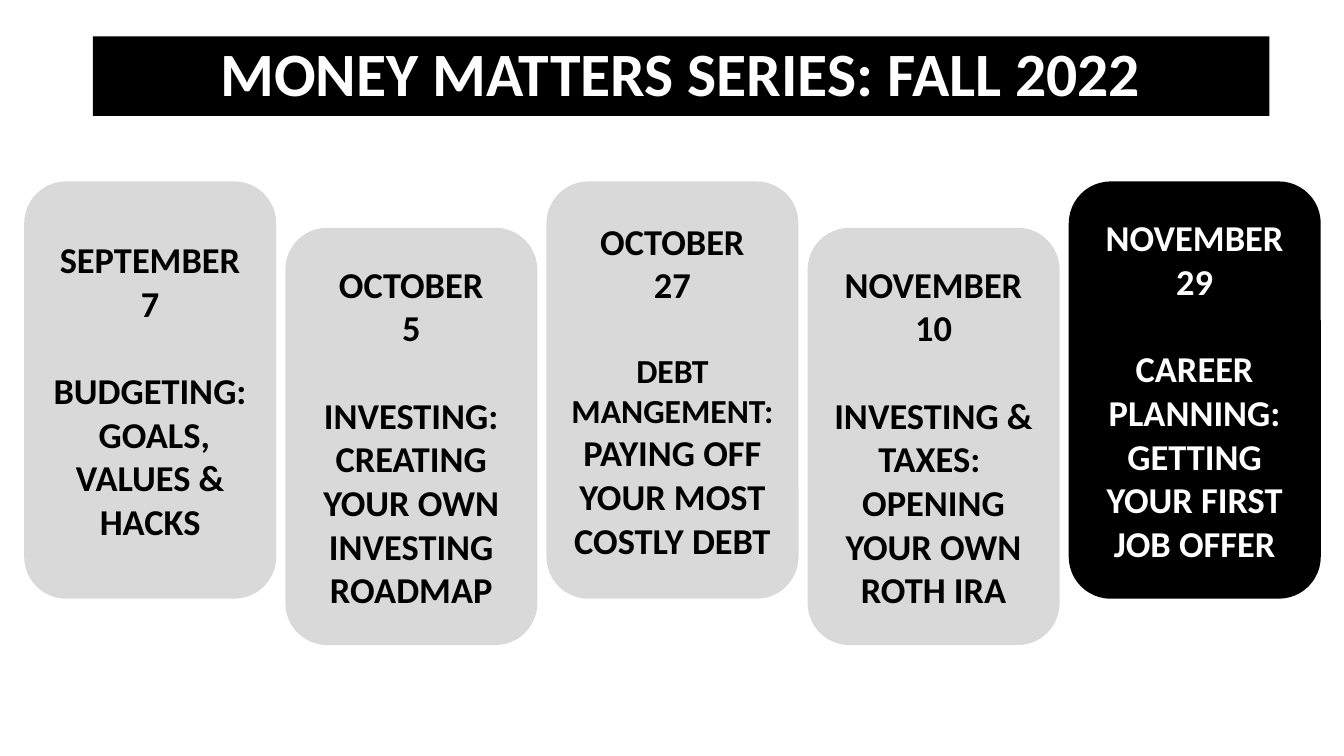
from dataclasses import dataclass

from pptx import Presentation
from pptx.dml.color import RGBColor
from pptx.enum.shapes import MSO_SHAPE
from pptx.enum.text import MSO_ANCHOR, MSO_AUTO_SIZE, PP_ALIGN
from pptx.util import Inches, Pt

COLOURS = {"black": "000000", "white": "FFFFFF", "grey": "D9D9D9"}
FONT = "Calibri"
TEXT_SIZE = 26
TOPIC_GAP = Pt(31.2)  # one line of card text

CARD_LEFT, CARD_STEP = 0.24, 2.59
CARD_WIDTH, CARD_HEIGHT = 2.5, 4.14
CARD_TOPS = (1.8, 2.26)  # cards alternate between high and low


@dataclass
class Span:
    text: str
    size: int = TEXT_SIZE


@dataclass
class Session:
    date: str
    topic: list[list[Span]]  # paragraphs, each a list of spans
    fill: str = "grey"
    ink: str = "black"


SESSIONS = [
    Session("SEPTEMBER\n7", [[Span("BUDGETING:")], [Span(" GOALS, VALUES & HACKS")]]),
    Session("OCTOBER\n5", [[Span("INVESTING:")],
                           [Span("CREATING YOUR OWN INVESTING ROADMAP")]]),
    Session("OCTOBER\n27", [[Span("DEBT MANGEMENT: ", 24),
                             Span("PAYING OFF YOUR MOST COSTLY DEBT")]]),
    Session("NOVEMBER 10", [[Span("INVESTING & TAXES: \nOPENING YOUR OWN ROTH IRA")]]),
    Session("NOVEMBER\n29", [[Span("CAREER PLANNING: GETTING YOUR FIRST JOB OFFER")]],
            fill="black", ink="white"),
]


def colour(name: str) -> RGBColor:
    return RGBColor.from_string(COLOURS[name])


def fill_shape(shape, name: str) -> None:
    shape.fill.solid()
    shape.fill.fore_color.rgb = colour(name)
    shape.line.fill.background()


def add_span(paragraph, span: Span, ink: str) -> None:
    """Add a span as runs, with a line break at each newline."""
    for index, line in enumerate(span.text.split("\n")):
        if index:
            paragraph.add_line_break()
        run = paragraph.add_run()
        run.text = line
        run.font.name = FONT
        run.font.size = Pt(span.size)
        run.font.bold = True
        run.font.color.rgb = colour(ink)


def add_title(slide, text: str) -> None:
    title = slide.shapes.title
    title.left, title.top = Inches(0.92), Inches(0.36)
    title.width, title.height = Inches(11.67), Inches(0.79)
    fill_shape(title, "black")
    frame = title.text_frame
    frame.auto_size = MSO_AUTO_SIZE.NONE
    frame.vertical_anchor = MSO_ANCHOR.MIDDLE
    paragraph = frame.paragraphs[0]
    paragraph.alignment = PP_ALIGN.CENTER
    paragraph.line_spacing = 0.9
    add_span(paragraph, Span(text, 44), "white")


def add_card(slide, index: int, session: Session) -> None:
    card = slide.shapes.add_shape(
        MSO_SHAPE.ROUNDED_RECTANGLE,
        Inches(CARD_LEFT + index * CARD_STEP), Inches(CARD_TOPS[index % 2]),
        Inches(CARD_WIDTH), Inches(CARD_HEIGHT))
    card.shadow.inherit = False
    fill_shape(card, session.fill)
    frame = card.text_frame
    frame.word_wrap = True
    frame.vertical_anchor = MSO_ANCHOR.MIDDLE
    for number, spans in enumerate([[Span(session.date)], *session.topic]):
        paragraph = frame.add_paragraph() if number else frame.paragraphs[0]
        paragraph.alignment = PP_ALIGN.CENTER
        if number == 1:
            paragraph.space_before = TOPIC_GAP
        for span in spans:
            add_span(paragraph, span, session.ink)


def main() -> None:
    presentation = Presentation()
    presentation.slide_width = Inches(13.33)
    presentation.slide_height = Inches(7.5)
    slide = presentation.slides.add_slide(presentation.slide_layouts[5])

    # Heading bar
    add_title(slide, "MONEY MATTERS SERIES: FALL 2022")

    # Session cards, left to right
    for index, session in enumerate(SESSIONS):
        add_card(slide, index, session)

    presentation.save("out.pptx")


if __name__ == "__main__":
    main()
